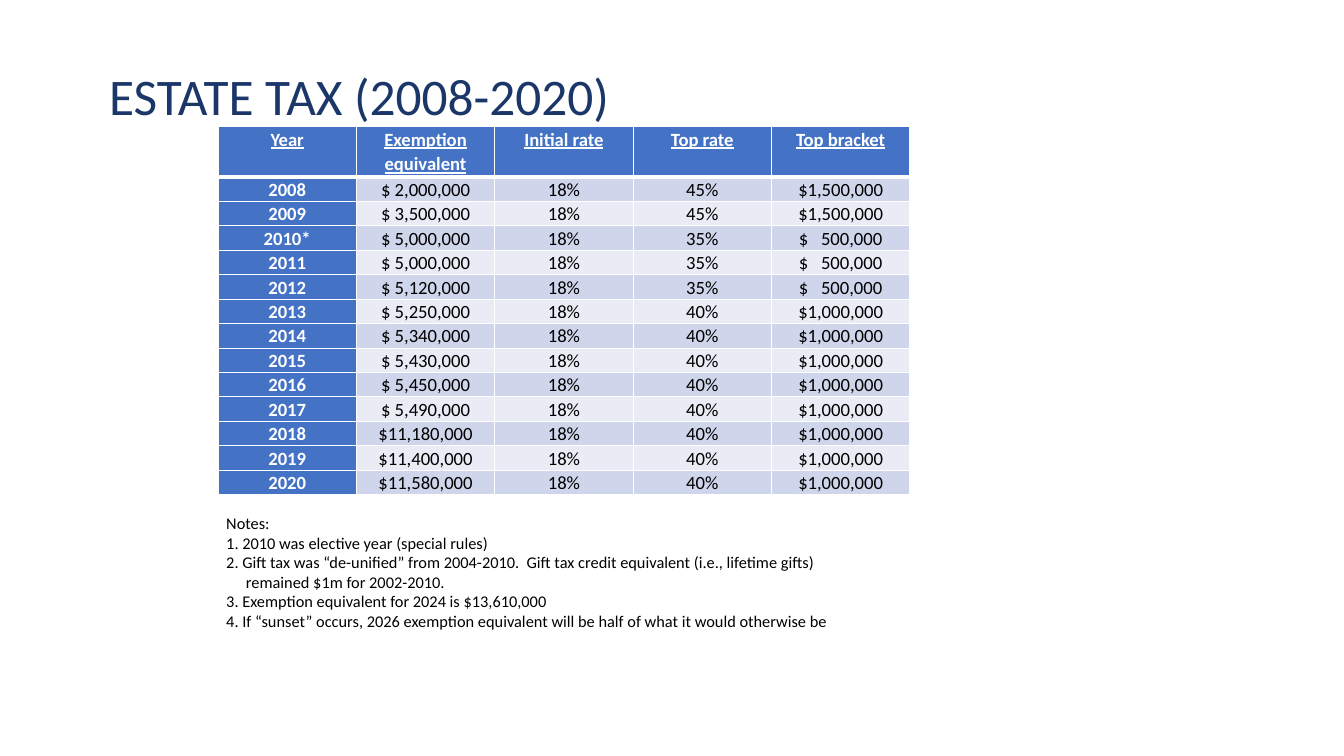
from lxml import etree
from pptx import Presentation
from pptx.dml.color import RGBColor
from pptx.enum.text import MSO_ANCHOR, MSO_AUTO_SIZE, PP_ALIGN
from pptx.oxml.ns import qn
from pptx.util import Emu, Pt

TOP = MSO_ANCHOR.TOP
FIXED = MSO_AUTO_SIZE.NONE
LEFT, CENTER = PP_ALIGN.LEFT, PP_ALIGN.CENTER

HEADS = ["Year", "Exemption equivalent", "Initial rate", "Top rate", "Top bracket"]
RATES = [
    ("2008", "$ 2,000,000", "45%", "$1,500,000"),
    ("2009", "$ 3,500,000", "45%", "$1,500,000"),
    ("2010*", "$ 5,000,000", "35%", "$   500,000"),
    ("2011", "$ 5,000,000", "35%", "$   500,000"),
    ("2012", "$ 5,120,000", "35%", "$   500,000"),
    ("2013", "$ 5,250,000", "40%", "$1,000,000"),
    ("2014", "$ 5,340,000", "40%", "$1,000,000"),
    ("2015", "$ 5,430,000", "40%", "$1,000,000"),
    ("2016", "$ 5,450,000", "40%", "$1,000,000"),
    ("2017", "$ 5,490,000", "40%", "$1,000,000"),
    ("2018", "$11,180,000", "40%", "$1,000,000"),
    ("2019", "$11,400,000", "40%", "$1,000,000"),
    ("2020", "$11,580,000", "40%", "$1,000,000"),
]
NOTES = [
    (0, ["Notes:"]),
    (0, ["1. 2010 was elective year (special rules)"]),
    (16, ["2. Gift tax was “de-unified” from 2004-2010.  Gift tax credit equivalent (i.e., lifetime gifts)",
          " remained $1m for 2002-2010."]),
    (16, ["3. Exemption equivalent for 2024 is $13,610,000"]),
    (16, ["4. If “sunset” occurs, 2026 exemption equivalent will be half of what it would otherwise be"]),
]


def px(n):
    return Emu(round(n * 914400 / 84))


def color(text):
    return RGBColor.from_string(text)


class Deck:
    font = "Calibri"
    navy, blue, white, black = "1B3668", "4472C4", "FFFFFF", "000000"
    bands = ["E9EBF5", "CFD5EA"]

    def __init__(self):
        self.file = Presentation()
        self.file.slide_width, self.file.slide_height = px(1344), px(756)
        self.slide = self.file.slides.add_slide(self.file.slide_layouts[5])

    def run(self, para, text, size, tone, bold=False, line=False):
        run = para.add_run()
        run.text = text
        font = run.font
        font.name, font.size = self.font, Pt(size)
        font.bold, font.underline = bold, line
        font.color.rgb = color(tone)

    def title(self, text, x, y, w, h):
        shape = self.slide.shapes.title
        shape.left, shape.top, shape.width, shape.height = map(px, (x, y, w, h))
        frame = shape.text_frame
        frame.auto_size, frame.vertical_anchor = FIXED, TOP
        frame.margin_left, frame.margin_top = px(8), px(7)
        para = frame.paragraphs[0]
        para.alignment = LEFT
        self.run(para, text, 44, self.navy)

    def edge(self, cell, row):
        props = cell._tc.get_or_add_tcPr()
        for side in "LRTB":
            thick = (row, side) in ((0, "B"), (1, "T"))
            line = etree.SubElement(props, qn("a:ln" + side), w=str(Pt(3 if thick else 1)))
            fill = etree.SubElement(line, qn("a:solidFill"))
            etree.SubElement(fill, qn("a:srgbClr"), val=self.white)

    def cell(self, cell, text, row, col):
        self.edge(cell, row)
        head = row == 0
        dark = head or col == 0
        cell.fill.solid()
        cell.fill.fore_color.rgb = color(self.blue if dark else self.bands[row % 2])
        cell.margin_left = cell.margin_right = px(9)
        cell.margin_top = cell.margin_bottom = 0
        para = cell.text_frame.paragraphs[0]
        para.alignment, para.line_spacing = CENTER, 1.07
        self.run(para, text, 16, self.white if dark else self.black, dark, head)

    def table(self, rows, x, y, w, h, top):
        count, width = len(rows), len(rows[0])
        grid = self.slide.shapes.add_table(count, width, px(x), px(y), px(w), px(h)).table
        for col in grid.columns:
            col.width = px(w) // width
        for i, row in enumerate(grid.rows):
            row.height = px(h - top) // (count - 1) if i else px(top)
        for i, row in enumerate(rows):
            for j, text in enumerate(row):
                self.cell(grid.cell(i, j), text, i, j)

    def notes(self, items, x, y, w, h):
        frame = self.slide.shapes.add_textbox(px(x), px(y), px(w), px(h)).text_frame
        frame.word_wrap = True
        for i, (hang, lines) in enumerate(items):
            para = frame.add_paragraph() if i else frame.paragraphs[0]
            if hang:
                props = para._p.get_or_add_pPr()
                props.set("marL", str(px(hang)))
                props.set("indent", str(-px(hang)))
            for j, text in enumerate(lines):
                if j:
                    para.add_line_break()
                self.run(para, text, 14, self.black)


def main():
    deck = Deck()
    deck.title("ESTATE TAX (2008-2020)", 101, 57, 1127, 49)
    rows = [(year, exempt, "18%", rate, limit) for year, exempt, rate, limit in RATES]
    deck.table([HEADS] + rows, 218, 127, 692, 367, 50)
    deck.notes(NOTES, 218, 509, 856, 164)
    deck.file.save("out.pptx")


if __name__ == "__main__":
    main()
